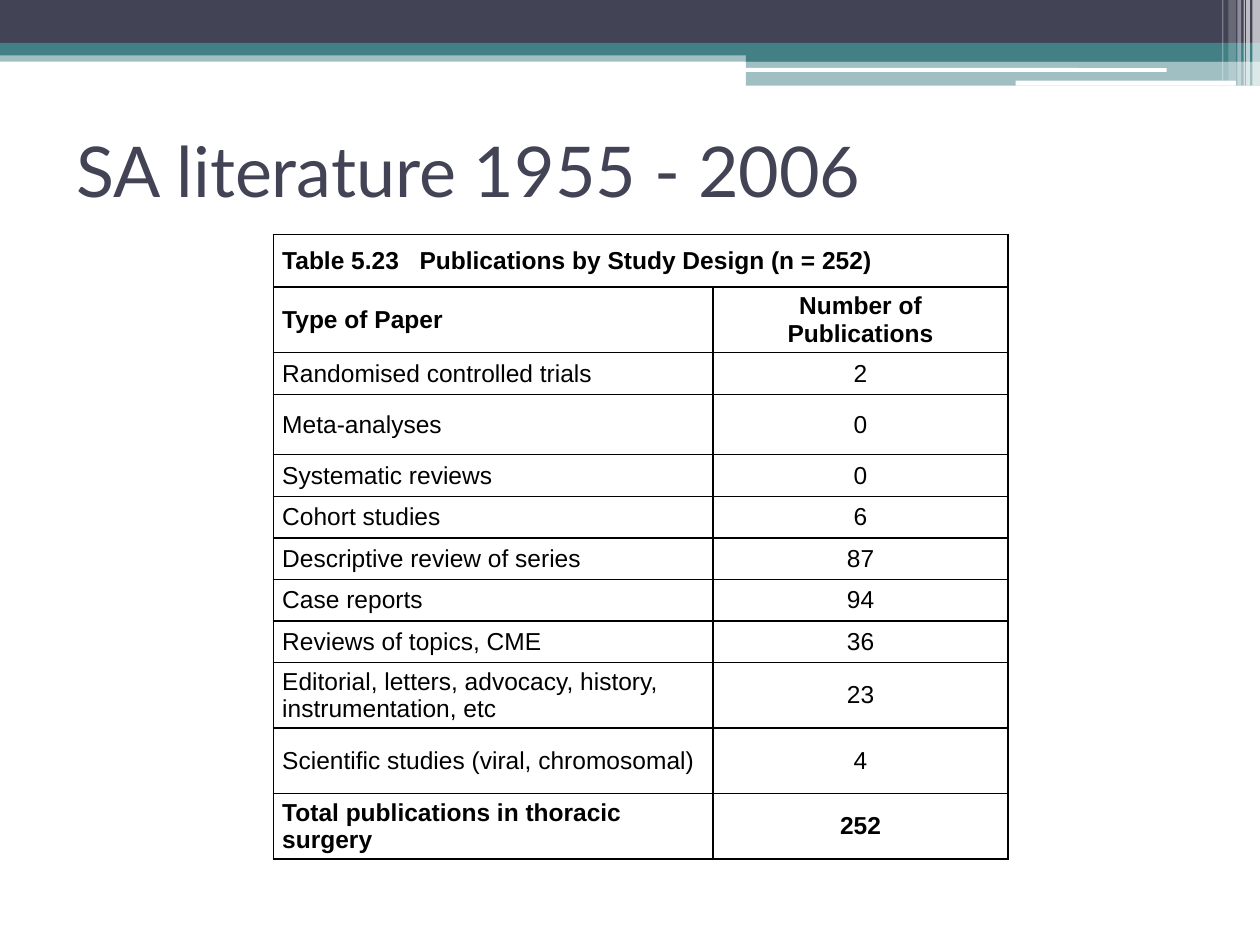
from dataclasses import dataclass
from typing import NamedTuple

from lxml import etree
from pptx import Presentation
from pptx.dml.color import RGBColor
from pptx.enum.shapes import MSO_SHAPE
from pptx.enum.text import MSO_ANCHOR, MSO_AUTO_SIZE, PP_ALIGN
from pptx.oxml.ns import qn
from pptx.util import Inches, Pt

RECT, ROUNDED = MSO_SHAPE.RECTANGLE, MSO_SHAPE.ROUNDED_RECTANGLE
LEFT, CENTER = PP_ALIGN.LEFT, PP_ALIGN.CENTER
MIDDLE = MSO_ANCHOR.MIDDLE
TITLE_ONLY = 5
COLUMNS, ROWS = 1000, 750  # fine square grid over the slide


@dataclass(frozen=True)
class Theme:
    navy: str = "424456"
    teal: str = "438086"
    white: str = "FFFFFF"
    black: str = "000000"
    title_font: str = "Lato"
    table_font: str = "Arial"
    title_size: int = 40
    table_size: int = 14
    border: int = 1


class Area(NamedTuple):
    column: int
    row: int
    columns: int
    rows: int


@dataclass(frozen=True)
class Band:
    area: Area
    color: str
    opacity: int = 100
    shape: MSO_SHAPE = RECT


@dataclass(frozen=True)
class TableRow:
    label: str
    count: str
    rows: int = 33
    bold: bool = False


THEME = Theme()

BANDS = [
    Band(Area(0, 40, COLUMNS, 9), THEME.teal, 50),
    Band(Area(0, 0, COLUMNS, 34), THEME.navy),
    Band(Area(0, 34, COLUMNS, 10), THEME.teal),
    Band(Area(592, 39, 408, 10), THEME.teal),
    Band(Area(592, 48, 408, 20), THEME.teal, 50),
    Band(Area(591, 54, 335, 3), THEME.white, shape=ROUNDED),
    Band(Area(806, 64, 175, 4), THEME.white, shape=ROUNDED),
    Band(Area(994, 0, 6, 68), THEME.white, 65),
    Band(Area(989, 0, 3, 68), THEME.white, 65),
    Band(Area(987, 0, 1, 68), THEME.white, 60),
    Band(Area(982, 0, 3, 68), THEME.white, 40),
    Band(Area(975, 0, 6, 64), THEME.white, 20),
    Band(Area(970, 0, 1, 64), THEME.white, 30),
]

TITLE_AREA = Area(51, 76, 900, 117)
TABLE_AREA = Area(217, 186, 583, 496)
TABLE_COLUMNS = (349, 234)
CAPTION_TAB = 109
TABLE_ROWS = [
    TableRow("Table 5.23\tPublications by Study Design (n = 252)", "", 42, True),
    TableRow("Type of Paper", "Number of\nPublications", 52, True),
    TableRow("Randomised controlled trials", "2"),
    TableRow("Meta-analyses", "0", 48),
    TableRow("Systematic reviews", "0"),
    TableRow("Cohort studies", "6"),
    TableRow("Descriptive review of series", "87"),
    TableRow("Case reports", "94"),
    TableRow("Reviews of topics, CME", "36"),
    TableRow("Editorial, letters, advocacy, history, instrumentation, etc", "23", 52),
    TableRow("Scientific studies (viral, chromosomal)", "4", 52),
    TableRow("Total publications in thoracic surgery", "252", 52, True),
]


def grid(units: int) -> int:
    return Inches(units / 100)


def add_span(para, text: str, font: str, size: int, color: str, bold: bool = False) -> None:
    span = para.add_run()
    span.text = text
    span.font.name, span.font.size, span.font.bold = font, Pt(size), bold
    span.font.color.rgb = RGBColor.from_string(color)


def draw_band(slide, band: Band) -> None:
    box = slide.shapes.add_shape(band.shape, *map(grid, band.area))
    box.shadow.inherit = False
    box.line.fill.background()
    box.fill.solid()
    box.fill.fore_color.rgb = RGBColor.from_string(band.color)
    if band.opacity < 100:
        color = box.fill._xPr.find(".//" + qn("a:srgbClr"))
        etree.SubElement(color, qn("a:alpha"), val=str(band.opacity * 1000))


def draw_title(slide, text: str) -> None:
    title = slide.shapes.title
    title.left, title.top, title.width, title.height = map(grid, TITLE_AREA)
    frame = title.text_frame
    frame.auto_size, frame.word_wrap = MSO_AUTO_SIZE.NONE, True
    frame.vertical_anchor = MIDDLE
    para = frame.paragraphs[0]
    para.alignment = LEFT
    add_span(para, text, THEME.title_font, THEME.title_size, THEME.navy)


def draw_borders(cell) -> None:
    properties = cell._tc.get_or_add_tcPr()
    for side in ("lnL", "lnR", "lnT", "lnB"):
        line = etree.SubElement(properties, qn(f"a:{side}"), w=str(Pt(THEME.border)))
        fill = etree.SubElement(line, qn("a:solidFill"))
        etree.SubElement(fill, qn("a:srgbClr"), val=THEME.black)


def fill_cell(cell, text: str, alignment: PP_ALIGN, bold: bool) -> None:
    draw_borders(cell)
    cell.fill.background()
    cell.vertical_anchor = MIDDLE
    cell.margin_left = cell.margin_right = grid(7)
    cell.margin_top = cell.margin_bottom = 0
    frame = cell.text_frame
    for index, line in enumerate(text.split("\n")):
        para = frame.add_paragraph() if index else frame.paragraphs[0]
        para.alignment = alignment
        if line:
            add_span(para, line, THEME.table_font, THEME.table_size, THEME.black, bold)


def set_tab_stop(para, position: int) -> None:
    stops = etree.SubElement(para._p.get_or_add_pPr(), qn("a:tabLst"))
    etree.SubElement(stops, qn("a:tab"), pos=str(grid(position)), algn="l")


def draw_table(slide) -> None:
    table = slide.shapes.add_table(
        len(TABLE_ROWS), len(TABLE_COLUMNS), *map(grid, TABLE_AREA)
    ).table
    table.first_row = table.horz_banding = False
    for column, width in zip(table.columns, TABLE_COLUMNS):
        column.width = grid(width)
    for index, row in enumerate(TABLE_ROWS):
        table.rows[index].height = grid(row.rows)
        fill_cell(table.cell(index, 0), row.label, LEFT, row.bold)
        fill_cell(table.cell(index, 1), row.count, CENTER, row.bold)
    caption = table.cell(0, 0)
    caption.merge(table.cell(0, 1))
    set_tab_stop(caption.text_frame.paragraphs[0], CAPTION_TAB)


def main() -> None:
    deck = Presentation()
    deck.slide_width, deck.slide_height = grid(COLUMNS), grid(ROWS)
    slide = deck.slides.add_slide(deck.slide_layouts[TITLE_ONLY])
    for band in BANDS:
        draw_band(slide, band)
    draw_title(slide, "SA literature 1955 - 2006")
    draw_table(slide)
    deck.save("out.pptx")


if __name__ == "__main__":
    main()
